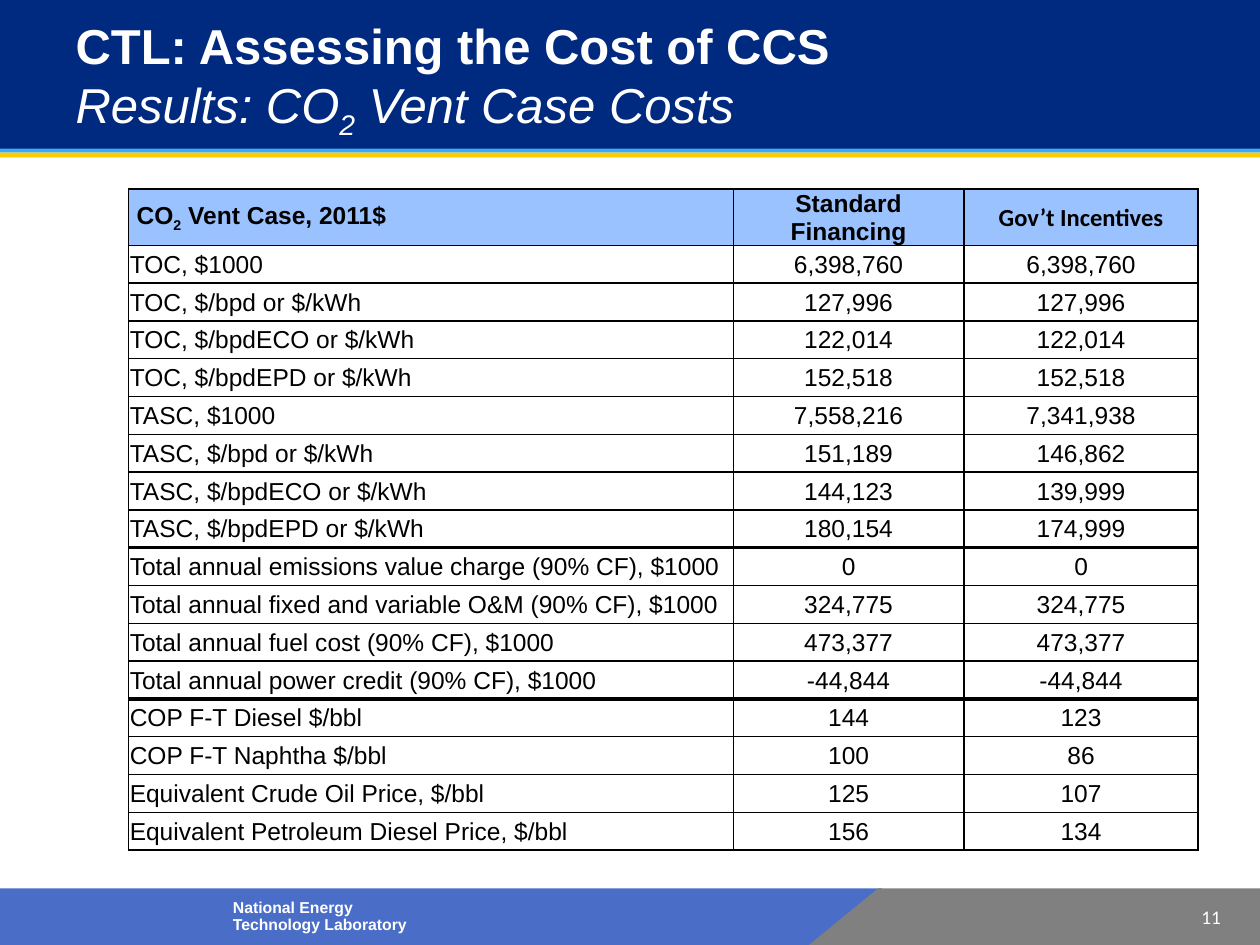
from lxml.etree import SubElement
from pptx import Presentation
from pptx.dml.color import RGBColor
from pptx.enum.shapes import MSO_SHAPE as Geo
from pptx.enum.text import MSO_ANCHOR as Anchor, MSO_AUTO_SIZE as Auto, PP_ALIGN as Align
from pptx.oxml.ns import qn
from pptx.util import Inches, Pt

NAVY = RGBColor(0x00, 0x2A, 0x7F)
SKY = RGBColor(0x37, 0xAB, 0xFF)
GOLD = RGBColor(0xFE, 0xCB, 0x00)
BLUE = RGBColor(0x4A, 0x6E, 0xC8)
GRAY = RGBColor(0x80, 0x80, 0x80)
PALE = RGBColor(0x99, 0xC2, 0xFF)
WHITE = RGBColor(0xFF, 0xFF, 0xFF)
BLACK = RGBColor(0x00, 0x00, 0x00)

WIDE, HIGH = 10, 7.5
FOOT = 0.45
BASE = HIGH - FOOT
SPLIT = 6.97

BANDS = [
    (Geo.RECTANGLE, BLUE, 0, BASE, 7, FOOT),
    (Geo.RECTANGLE, GRAY, SPLIT, BASE, WIDE - SPLIT, FOOT),
    (Geo.ISOSCELES_TRIANGLE, GRAY, SPLIT - 0.55, BASE, 0.55, FOOT),
    (Geo.RECTANGLE, GOLD, 0, 1.21, WIDE, 0.04),
    (Geo.RECTANGLE, SKY, 0, 1.13, WIDE, 0.08),
    (Geo.RECTANGLE, NAVY, 0, 0, WIDE, 1.18),
]
TITLE = "CTL: Assessing the Cost of CCS"
SUB = "Results: CO|2| Vent Case Costs"
LAB = "National Energy Technology Laboratory"
PAGE = "11"

ROWS = [
    (" CO|2| Vent Case, 2011$", "Standard Financing", "Gov’t Incentives"),
    ("TOC, $1000", "6,398,760", "6,398,760"),
    ("TOC, $/bpd or $/kWh", "127,996", "127,996"),
    ("TOC, $/bpdECO or $/kWh", "122,014", "122,014"),
    ("TOC, $/bpdEPD or $/kWh", "152,518", "152,518"),
    ("TASC, $1000", "7,558,216", "7,341,938"),
    ("TASC, $/bpd or $/kWh", "151,189", "146,862"),
    ("TASC, $/bpdECO or $/kWh", "144,123", "139,999"),
    ("TASC, $/bpdEPD or $/kWh", "180,154", "174,999"),
    ("Total annual emissions value charge (90% CF), $1000", "0", "0"),
    ("Total annual fixed and variable O&M (90% CF), $1000", "324,775", "324,775"),
    ("Total annual fuel cost (90% CF), $1000", "473,377", "473,377"),
    ("Total annual power credit (90% CF), $1000", "-44,844", "-44,844"),
    ("COP F-T Diesel $/bbl", "144", "123"),
    ("COP F-T Naphtha $/bbl", "100", "86"),
    ("Equivalent Crude Oil Price, $/bbl", "125", "107"),
    ("Equivalent Petroleum Diesel Price, $/bbl", "156", "134"),
]
COLS = (4.8, 1.83, 1.86)
ROW = 0.3
BREAKS = (8, 12)

HEAD = dict(name="Arial", size=Pt(28), bold=True, italic=False)
LEAD = dict(HEAD, bold=False, italic=True)
MARK = dict(name="Arial", size=Pt(9), bold=True)
NUM = dict(name="Calibri", size=Pt(11), bold=False)
CELL = dict(name="Arial", size=Pt(14), bold=False)
TOP = dict(CELL, bold=True)
PAD = dict(margin_left=Inches(0.01), margin_right=Inches(0.01),
           margin_top=Inches(0.01), margin_bottom=0, vertical_anchor=Anchor.MIDDLE)
FRAME = dict(word_wrap=True, auto_size=Auto.NONE, vertical_anchor=Anchor.MIDDLE)
FLUSH = dict(FRAME, margin_left=0, margin_right=0)
TIGHT = dict(FLUSH, margin_top=0, margin_bottom=0)


def apply(obj, vals):
    for key, val in vals.items():
        setattr(obj, key, val)


def write(para, text, font, color):
    for i, part in enumerate(text.split("|")):
        run = para.add_run()
        run.text = part
        apply(run.font, font)
        run.font.color.rgb = color
        if i % 2:
            run.font._element.set("baseline", "-25000")


def label(slide, box, text, font, frame, form):
    body = slide.shapes.add_textbox(*map(Inches, box)).text_frame
    apply(body, frame)
    para = body.paragraphs[0]
    apply(para, form)
    write(para, text, font, WHITE)


def border(cell, top, low):
    props = cell._tc.get_or_add_tcPr()
    for i, (side, size) in enumerate(zip("LRTB", (1, 1, top, low))):
        line = SubElement(props, qn(f"a:ln{side}"), w=str(Pt(size)))
        fill = SubElement(line, qn("a:solidFill"))
        SubElement(fill, qn("a:srgbClr"), val=str(BLACK))
        props.insert(i, line)


def draw_bands(slide):
    for geo, color, *box in BANDS:
        band = slide.shapes.add_shape(geo, *map(Inches, box))
        band.shadow.inherit = False
        band.fill.solid()
        band.fill.fore_color.rgb = color
        band.line.fill.background()
        if geo == Geo.ISOSCELES_TRIANGLE:
            band.adjustments[0] = 1


def draw_title(slide):
    title = slide.shapes.title
    slide.shapes._spTree.append(title._element)
    apply(title, dict(left=Inches(0.6), top=Inches(0.1),
                      width=Inches(7.9), height=Inches(1.04)))
    apply(title.text_frame, FLUSH)
    para = title.text_frame.paragraphs[0]
    para.alignment = Align.LEFT
    write(para, TITLE, HEAD, WHITE)
    para.add_line_break()
    SubElement(para._p[-1], qn("a:rPr"), sz="2800")
    write(para, SUB, LEAD, WHITE)


def draw_table(slide):
    box = (1.02, 1.5, sum(COLS), ROW * len(ROWS))
    table = slide.shapes.add_table(len(ROWS), len(COLS), *map(Inches, box)).table
    table.first_row = table.horz_banding = False
    for col, width in zip(table.columns, COLS):
        col.width = Inches(width)
    for r, row in enumerate(ROWS):
        table.rows[r].height = Inches(ROW)
        for c, text in enumerate(row):
            cell = table.cell(r, c)
            apply(cell, PAD)
            cell.fill.solid()
            cell.fill.fore_color.rgb = WHITE if r else PALE
            border(cell, *(2.25 if n in BREAKS else 1 for n in (r - 1, r)))
            para = cell.text_frame.paragraphs[0]
            para.alignment = Align.CENTER if c else Align.LEFT
            font = CELL if r else dict(TOP, name="Calibri" if c == 2 else "Arial")
            write(para, text, font, BLACK)


def main():
    deck = Presentation()
    deck.slide_width, deck.slide_height = Inches(WIDE), Inches(HIGH)
    slide = deck.slides.add_slide(deck.slide_layouts[5])
    draw_bands(slide)
    label(slide, (9.24, 7.18, 0.45, 0.19), PAGE, NUM, TIGHT, dict(alignment=Align.RIGHT))
    label(slide, (1.75, 7.09, 1.78, 0.37), LAB, MARK, FRAME, dict(line_spacing=0.9))
    draw_title(slide)
    draw_table(slide)
    deck.save("out.pptx")


if __name__ == "__main__":
    main()
